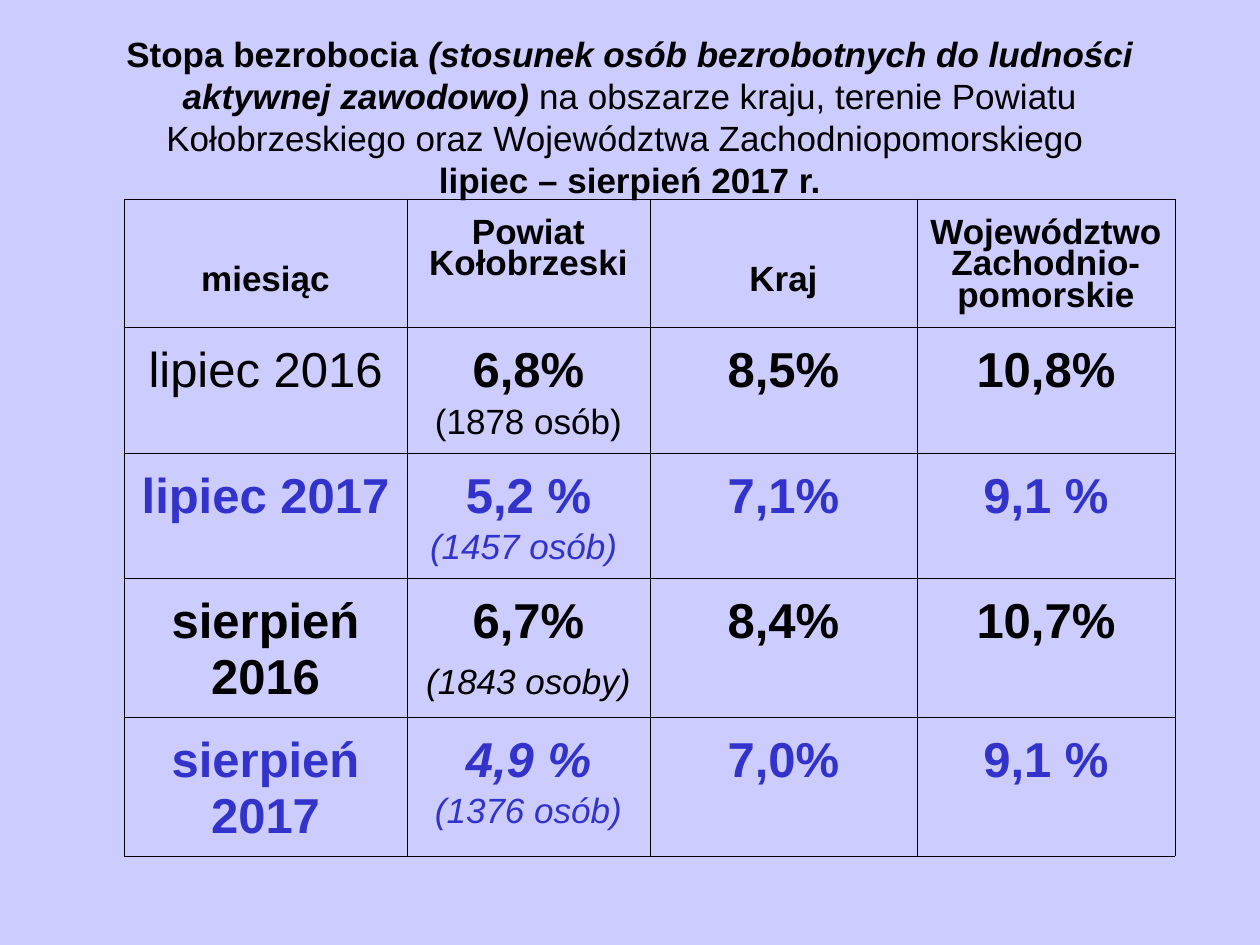
from lxml.etree import SubElement
from pptx import Presentation
from pptx.dml.color import RGBColor
from pptx.enum.text import MSO_ANCHOR, PP_ALIGN
from pptx.oxml.ns import qn
from pptx.util import Pt

PX = 914400 // 126
BLACK, BLUE, LAVENDER = "000000", "3333CC", "CCCCFF"
INNER_LINE, OUTER_LINE = 0.11, 0.23
BOLD, ITALIC = {"bold": True}, {"italic": True}
BOLD_ITALIC = BOLD | ITALIC

# A paragraph is a list of (text, format) runs; "\n" stands for a line break.
TITLE = [
    ("Stopa bezrobocia ", BOLD),
    ("(stosunek osób bezrobotnych do ludności aktywnej zawodowo)", BOLD_ITALIC),
    (" na obszarze kraju, terenie Powiatu Kołobrzeskiego oraz "
     "Województwa Zachodniopomorskiego ", {}),
    ("\n", {}),
    ("lipiec – sierpień 2017 r.", BOLD),
]
# Column heading, top inset in px
HEADINGS = [("miesiąc", 67), ("Powiat Kołobrzeski", 20), ("Kraj", 67),
            ("Województwo Zachodnio-pomorskie", 20)]

BIG, BIG_BOLD = {"size": 28}, {"size": 28} | BOLD
# Colour, month lines, county rate, number of people, country rate, province rate
MONTHS = [
    (BLACK, [[("lipiec 2016", BIG)]], ("6,8%", BIG_BOLD),
     [("(1878 osób)", {})], "8,5%", "10,8%"),
    (BLUE, [[("lipiec 2017", BIG_BOLD)]], ("5,2 %", BIG_BOLD),
     [("(1457 osób) ", ITALIC)], "7,1%", "9,1 %"),
    (BLACK, [[("sierpień", BIG_BOLD)], [("2016", BIG_BOLD)]], ("6,7%", BIG_BOLD),
     [("(1843 osoby)", ITALIC), (" ", BIG)], "8,4%", "10,7%"),
    (BLUE, [[("sierpień", BIG_BOLD)], [("2017", BIG_BOLD)]], ("4,9 %", BIG_BOLD | ITALIC),
     [("(1376 osób)", ITALIC)], "7,0%", "9,1 %"),
]

TITLE_BOX = (63, 38, 1134, 157)
TABLE_LEFT, TABLE_TOP = 124, 199
COLUMN_WIDTHS = [283, 243, 267, 258]
ROW_HEIGHTS = [121, 120, 120, 133, 132]


def color(code):
    return RGBColor.from_string(code)


def write(frame, paragraphs, fill=BLACK, line_spacing=None, space_before=0):
    """Fill a text frame with centred paragraphs made of formatted runs."""
    for index, runs in enumerate(paragraphs):
        paragraph = frame.add_paragraph() if index else frame.paragraphs[0]
        paragraph.alignment = PP_ALIGN.CENTER
        paragraph.line_spacing = line_spacing
        paragraph.space_before = Pt(space_before)
        for text, style in runs:
            if text == "\n":
                paragraph.add_line_break()
                continue
            run = paragraph.add_run()
            run.text = text
            font = run.font
            font.name = "Arial"
            font.size = Pt(style.get("size", 20))
            font.bold = style.get("bold", False)
            font.italic = style.get("italic", False)
            font.color.rgb = color(fill)


def draw_borders(cell, outer_sides):
    properties = cell._tc.get_or_add_tcPr()
    for side in "LRTB":
        width = OUTER_LINE if side in outer_sides else INNER_LINE
        line = SubElement(properties, qn(f"a:ln{side}"), w=str(int(Pt(width))))
        solid = SubElement(line, qn("a:solidFill"))
        SubElement(solid, qn("a:srgbClr"), val=BLACK)


def table_cells():
    """Return rows of (paragraphs, colour, top inset, space before)."""
    rows = [[([[(text, BOLD)]], BLACK, inset, 5) for text, inset in HEADINGS]]
    for fill, month, county, people, country, province in MONTHS:
        contents = [month, [[county], people],
                    [[(country, BIG_BOLD)]], [[(province, BIG_BOLD)]]]
        rows.append([(content, fill, 25, 7) for content in contents])
    return rows


def add_title(slide):
    frame = slide.shapes.add_textbox(*(v * PX for v in TITLE_BOX)).text_frame
    frame.word_wrap = True
    frame.vertical_anchor = MSO_ANCHOR.MIDDLE
    write(frame, [TITLE])


def add_rates(slide):
    rows = table_cells()
    table = slide.shapes.add_table(
        len(rows), len(COLUMN_WIDTHS), TABLE_LEFT * PX, TABLE_TOP * PX,
        sum(COLUMN_WIDTHS) * PX, sum(ROW_HEIGHTS) * PX).table
    table.first_row = table.horz_banding = False
    for column, width in zip(table.columns, COLUMN_WIDTHS):
        column.width = width * PX
    for row, height in zip(table.rows, ROW_HEIGHTS):
        row.height = height * PX
    last = len(COLUMN_WIDTHS) - 1
    for r, row in enumerate(rows):
        for c, (paragraphs, fill, inset, gap) in enumerate(row):
            cell = table.cell(r, c)
            outer = ("T" if r == 0 else "") + {0: "L", last: "R"}.get(c, "")
            draw_borders(cell, outer)
            cell.fill.background()
            cell.margin_top = inset * PX
            write(cell.text_frame, paragraphs, fill=fill,
                  line_spacing=0.81, space_before=gap)


def main():
    deck = Presentation()
    deck.slide_width, deck.slide_height = 1260 * PX, 945 * PX
    slide = deck.slides.add_slide(deck.slide_layouts[6])
    background = slide.background.fill
    background.solid()
    background.fore_color.rgb = color(LAVENDER)
    add_title(slide)
    add_rates(slide)
    deck.save("out.pptx")


if __name__ == "__main__":
    main()
